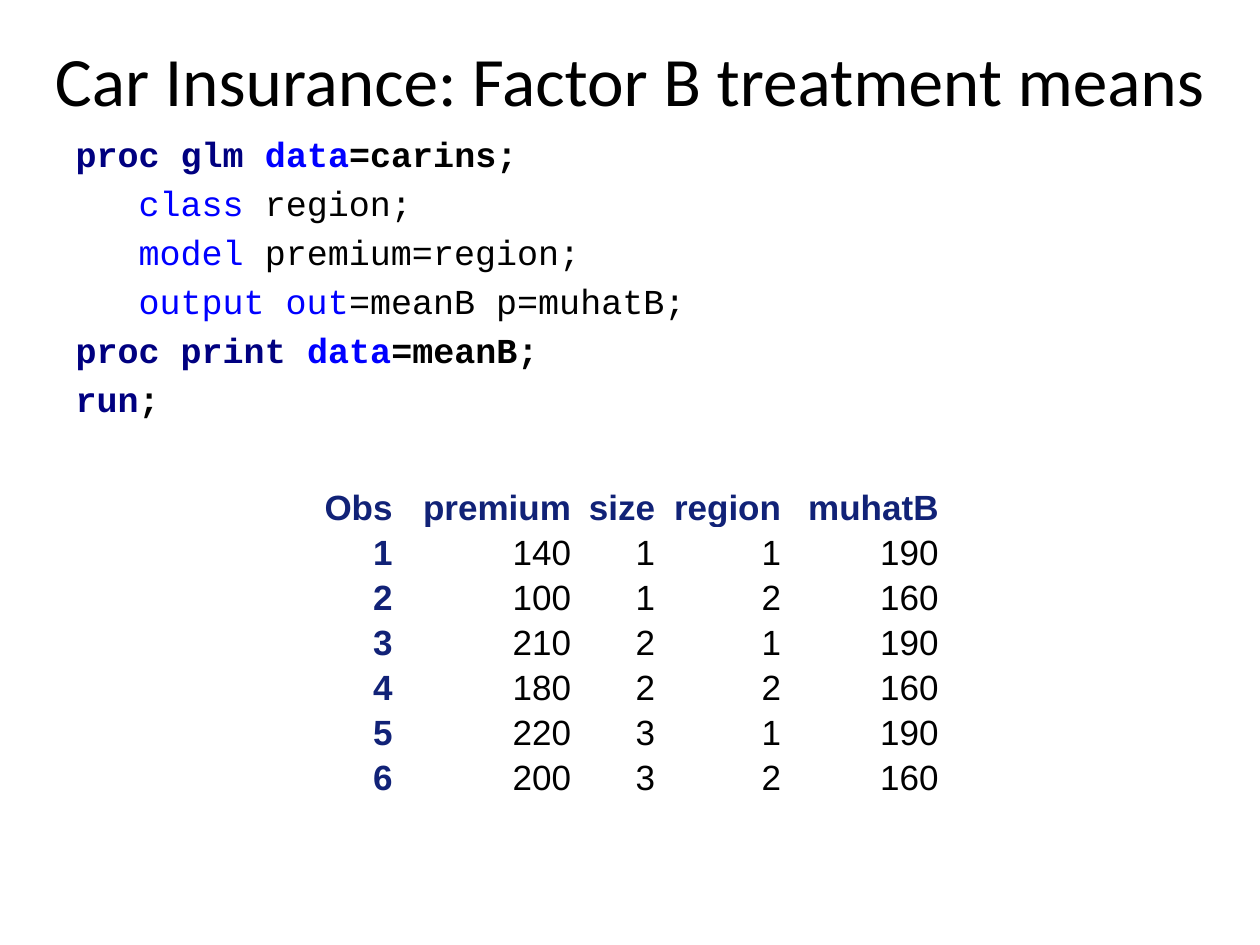
from dataclasses import dataclass

from lxml.etree import SubElement
from pptx import Presentation
from pptx.dml.color import RGBColor
from pptx.enum.text import MSO_ANCHOR, MSO_AUTO_SIZE, PP_ALIGN
from pptx.oxml.ns import qn
from pptx.util import Pt


@dataclass(frozen=True)
class Theme:
    text: RGBColor = RGBColor(0x00, 0x00, 0x00)
    step: RGBColor = RGBColor(0x00, 0x00, 0x80)
    keyword: RGBColor = RGBColor(0x00, 0x00, 0xFF)
    heading: RGBColor = RGBColor(0x11, 0x22, 0x77)
    title_font: str = "Calibri"
    code_font: str = "Courier New"
    table_font: str = "Arial"
    title_size: float = 39.6
    body_size: float = 20


THEME = Theme()

TITLE = "Car Insurance: Factor B treatment means"

# Each code line: is it a step statement, then its coloured pieces
CODE = [
    (True, [("proc glm ", THEME.step), ("data", THEME.keyword), ("=carins;", THEME.text)]),
    (False, [("class", THEME.keyword), (" region;", THEME.text)]),
    (False, [("model", THEME.keyword), (" premium=region;", THEME.text)]),
    (False, [("output out", THEME.keyword), ("=meanB p=muhatB;", THEME.text)]),
    (True, [("proc print ", THEME.step), ("data", THEME.keyword), ("=meanB;", THEME.text)]),
    (True, [("run", THEME.step), (";", THEME.text)]),
]
HANGING = 27
STATEMENT_INDENT = 36  # three characters of the code font

HEADERS = ["Obs", "premium", "size", "region", "muhatB"]
OBSERVATIONS = [
    (1, 140, 1, 1, 190),
    (2, 100, 1, 2, 160),
    (3, 210, 2, 1, 190),
    (4, 180, 2, 2, 160),
    (5, 220, 3, 1, 190),
    (6, 200, 3, 2, 160),
]
COLUMN_WIDTHS = [48, 102, 48, 72, 90]


def place(item, left, top, width, height):
    item.left, item.top = Pt(left), Pt(top)
    item.width, item.height = Pt(width), Pt(height)


def set_font(font, name, size, bold, color=None):
    font.name, font.size, font.bold = name, Pt(size), bold
    if color is not None:
        font.color.rgb = color


def add_title(slide):
    title = slide.shapes.title
    place(title, 0, 0, 720, 90)
    frame = title.text_frame
    frame.text = TITLE
    frame.auto_size = MSO_AUTO_SIZE.NONE
    frame.vertical_anchor = MSO_ANCHOR.MIDDLE
    heading = frame.paragraphs[0]
    heading.alignment = PP_ALIGN.CENTER
    set_font(heading.font, THEME.title_font, THEME.title_size, False, THEME.text)


def add_code(slide):
    listing = slide.placeholders[1]
    place(listing, 36, 72, 648, 192)
    frame = listing.text_frame
    frame.auto_size = MSO_AUTO_SIZE.NONE
    for number, (is_step, pieces) in enumerate(CODE):
        line = frame.add_paragraph() if number else frame.paragraphs[0]
        # No bullet; statements inside a step are indented
        properties = line._p.get_or_add_pPr()
        indent = 0 if is_step else STATEMENT_INDENT
        properties.set("marL", str(Pt(HANGING + indent)))
        properties.set("indent", str(Pt(-HANGING)))
        SubElement(properties, qn("a:buNone"))
        set_font(line.font, THEME.code_font, THEME.body_size, is_step)
        for text, color in pieces:
            piece = line.add_run()
            piece.text = text
            piece.font.color.rgb = color


def fill_cell(cell, value, is_heading):
    cell.fill.background()
    cell.vertical_anchor = MSO_ANCHOR.MIDDLE
    cell.margin_left = cell.margin_right = Pt(3.6)
    cell.margin_top = cell.margin_bottom = 0
    cell.text = str(value)
    entry = cell.text_frame.paragraphs[0]
    entry.alignment = PP_ALIGN.RIGHT
    entry.line_spacing = 1.15
    entry.space_before = entry.space_after = Pt(5)
    color = THEME.heading if is_heading else THEME.text
    set_font(entry.font, THEME.table_font, THEME.body_size, is_heading, color)


def add_means_table(slide):
    rows = [HEADERS, *OBSERVATIONS]
    means_frame = slide.shapes.add_table(
        len(rows), len(HEADERS), Pt(180), Pt(276), Pt(sum(COLUMN_WIDTHS)), Pt(193)
    )
    means = means_frame.table
    means.first_row = means.horz_banding = False
    for column, width in zip(means.columns, COLUMN_WIDTHS):
        column.width = Pt(width)
    for r, values in enumerate(rows):
        means.rows[r].height = 0  # rows grow to fit their text
        for c, value in enumerate(values):
            fill_cell(means.cell(r, c), value, r == 0 or c == 0)
    means_frame.height = Pt(193)


def main():
    deck = Presentation()
    deck.slide_width, deck.slide_height = Pt(720), Pt(540)
    slide = deck.slides.add_slide(deck.slide_layouts[1])
    add_title(slide)
    add_code(slide)
    add_means_table(slide)
    deck.save("out.pptx")


if __name__ == "__main__":
    main()
